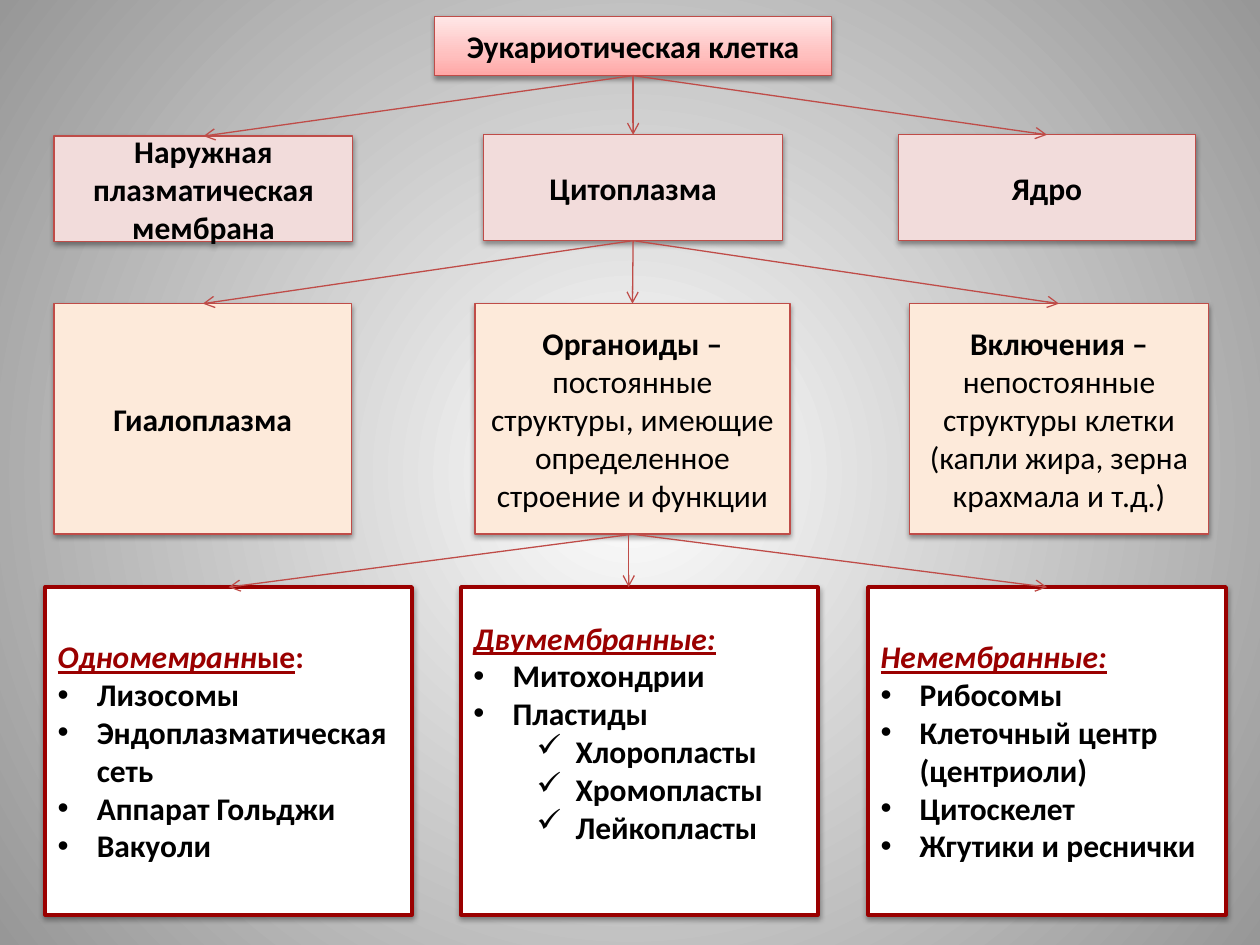
"""Build a slide with the tree diagram of the eukaryotic cell."""
from lxml import etree
from pptx import Presentation, util as u
from pptx.dml.color import RGBColor
from pptx.enum import shapes, text
from pptx.oxml.ns import qn

RED, DARK_RED, BLACK = "BF4C48", "9A0000", "000000"
PINK, CREAM, WHITE = "F2DCDB", "FDEADA", "FFFFFF"
TITLE_STOPS = [(0, "FFA6A5"), (35, "FFC0BF"), (100, "FFE7E7")]
BACKGROUND_STOPS = [(0, WHITE), (100, "979797")]
BULLETS = {"dot": ("•", "Arial", 0.31), "check": ("✓", "Wingdings", 0.81)}

ROOT = ("cell", (3.45, 0.13, 3.15, 0.47), [("Эукариотическая клетка", "b")])
PARTS = [
    ("membrane", (0.43, 1.08, 2.37, 0.84), [("Наружная плазматическая мембрана", "b")]),
    ("cytoplasm", (3.84, 1.07, 2.37, 0.84), [("Цитоплазма", "b")]),
    ("nucleus", (7.13, 1.07, 2.36, 0.84), [("Ядро", "b")]),
]
CONTENTS = [
    ("hyaloplasm", (0.43, 2.41, 2.36, 1.83), [("Гиалоплазма", "b")]),
    ("organelles", (3.77, 2.41, 2.5, 1.83),
     [("Органоиды – ", "b"), ("постоянные структуры, имеющие определенное строение и функции", "")]),
    ("inclusions", (7.22, 2.41, 2.37, 1.83),
     [("Включения – ", "b"),
      ("непостоянные структуры клетки (капли жира, зерна крахмала и т.д.)", "")]),
]
GROUPS = [
    ("single", (0.36, 4.66, 2.91, 2.6), 0.05,
     [("Одномемранн", "biu"), ("ые", "bu"), (":", "b")],
     [("dot", "Лизосомы"), ("dot", "Эндоплазматическая сеть"),
      ("dot", "Аппарат Гольджи"), ("dot", "Вакуоли")]),
    ("double", (3.66, 4.66, 2.83, 2.6), 0.35,
     [("Двумембранные:", "biu")],
     [("dot", "Митохондрии"), ("dot", "Пластиды"), ("check", "Хлоропласты"),
      ("check", "Хромопласты"), ("check", "Лейкопласты")]),
    ("none", (6.89, 4.66, 2.84, 2.6), 0.05,
     [("Немембранные:", "biu")],
     [("dot", "Рибосомы"), ("dot", "Клеточный центр (центриоли)"),
      ("dot", "Цитоскелет"), ("dot", "Жгутики и реснички")]),
]
BRANCHES = {
    "cell": ["membrane", "cytoplasm", "nucleus"],
    "cytoplasm": ["hyaloplasm", "organelles", "inclusions"],
    "organelles": ["single", "none"],
}
DOUBLE_ARROW = (4.99, 4.24, 4.99, 4.66)


def color(value):
    return RGBColor.from_string(value)


def add_child(parent, tag, **attributes):
    return etree.SubElement(parent, qn(tag), {key: str(value) for key, value in attributes.items()})


def set_gradient(fill, element, stops, angle=None):
    fill.gradient()
    gradient = element.find(".//" + qn("a:gradFill"))
    for child in list(gradient):
        gradient.remove(child)
    stop_list = add_child(gradient, "a:gsLst")
    for position, value in stops:
        stop = add_child(stop_list, "a:gs", pos=position * 1000)
        add_child(stop, "a:srgbClr", val=value)
    if angle is None:
        circle = add_child(gradient, "a:path", path="circle")
        add_child(circle, "a:fillToRect", l=50000, t=50000, r=50000, b=50000)
    else:
        add_child(gradient, "a:lin", ang=angle * 60000, scaled=0)


def add_shadow(shape):
    shape.shadow.inherit = False
    effects = shape.element.spPr.find(qn("a:effectLst"))
    shadow = add_child(effects, "a:outerShdw", blurRad=u.Pt(3.1), dist=u.Pt(1.6),
                       dir=90 * 60000, rotWithShape=0)
    add_child(add_child(shadow, "a:srgbClr", val=BLACK), "a:alpha", val=38000)


def add_box(slide, box, fill, line=RED, width=0.75, bottom=0.05):
    shape = slide.shapes.add_shape(shapes.MSO_SHAPE.RECTANGLE, *map(u.Inches, box))
    if isinstance(fill, str):
        shape.fill.solid()
        shape.fill.fore_color.rgb = color(fill)
    else:
        set_gradient(shape.fill, shape.element, fill, 270)
    shape.line.color.rgb = color(line)
    shape.line.width = u.Pt(width)
    add_shadow(shape)
    frame_format = {"word_wrap": True, "vertical_anchor": text.MSO_ANCHOR.MIDDLE,
                    "margin_bottom": u.Inches(bottom)}
    for name, value in frame_format.items():
        setattr(shape.text_frame, name, value)
    return shape


def write(paragraph, runs, align, value=BLACK):
    paragraph.alignment = align
    for words, style in runs:
        run = paragraph.add_run()
        run.text = words
        font_format = {"name": "Calibri", "size": u.Pt(18), "bold": "b" in style,
                       "italic": "i" in style, "underline": "u" in style}
        for name, setting in font_format.items():
            setattr(run.font, name, setting)
        run.font.color.rgb = color(value)


def add_bullet(paragraph, kind):
    symbol, font, indent = BULLETS[kind]
    paragraph.level = int(kind == "check")
    properties = paragraph._p.get_or_add_pPr()
    properties.set("marL", str(u.Inches(indent)))
    properties.set("indent", str(u.Inches(-0.31)))
    if kind == "dot":
        add_child(properties, "a:buFont", typeface=font)
        add_child(properties, "a:buChar", char=symbol)
    else:
        add_child(properties, "a:buFont", typeface=font, charset=2)
        add_child(properties, "a:buChar", char="ü")


def add_arrow(slide, ends=(0, 0, 0, 0)):
    arrow = slide.shapes.add_connector(shapes.MSO_CONNECTOR.STRAIGHT, *map(u.Inches, ends))
    arrow.line.color.rgb = color(RED)
    arrow.line.width = u.Pt(0.75)
    add_child(arrow.line._get_or_add_ln(), "a:tailEnd", type="arrow")
    add_child(arrow.element.spPr, "a:effectLst")
    return arrow


def main():
    presentation = Presentation()
    presentation.slide_width, presentation.slide_height = u.Inches(10), u.Inches(7.5)
    slide = presentation.slides.add_slide(presentation.slide_layouts[6])
    set_gradient(slide.background.fill, slide.element, BACKGROUND_STOPS)

    boxes = {}
    for nodes, fill in (([ROOT], TITLE_STOPS), (PARTS, PINK), (CONTENTS, CREAM)):
        for name, box, runs in nodes:
            boxes[name] = add_box(slide, box, fill)
            write(boxes[name].text_frame.paragraphs[0], runs, text.PP_ALIGN.CENTER)

    for name, box, bottom, heading, items in GROUPS:
        boxes[name] = add_box(slide, box, WHITE, DARK_RED, 2.25, bottom)
        frame = boxes[name].text_frame
        write(frame.paragraphs[0], heading, text.PP_ALIGN.LEFT, DARK_RED)
        for kind, words in items:
            paragraph = frame.add_paragraph()
            write(paragraph, [(words, "b")], text.PP_ALIGN.LEFT)
            add_bullet(paragraph, kind)

    for parent, children in BRANCHES.items():
        for child in children:
            arrow = add_arrow(slide)
            arrow.begin_connect(boxes[parent], 2)
            arrow.end_connect(boxes[child], 0)
    add_arrow(slide, DOUBLE_ARROW)
    presentation.save("out.pptx")


if __name__ == "__main__":
    main()
